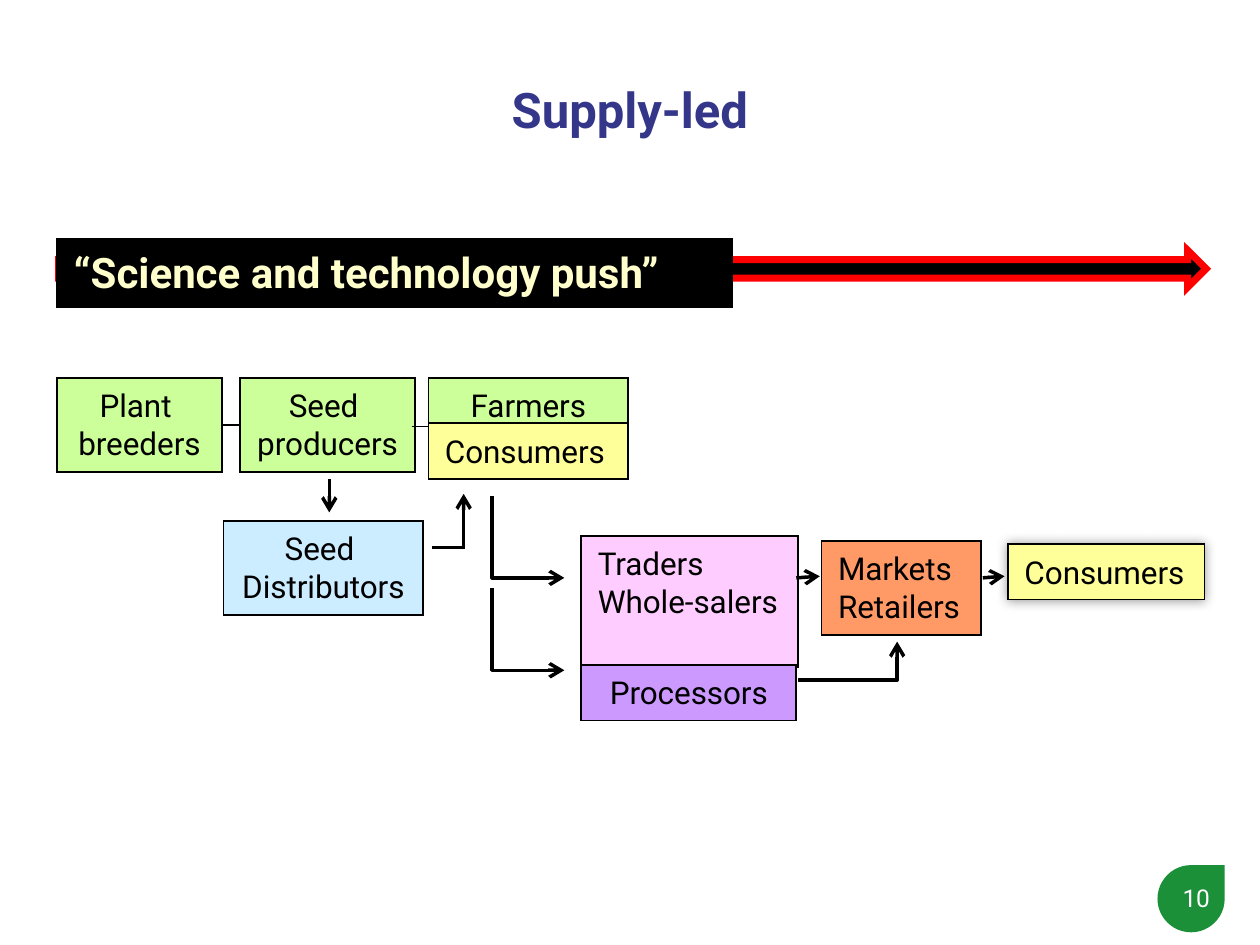
from lxml.etree import SubElement
from pptx import Presentation
from pptx.dml.color import RGBColor
from pptx.enum.shapes import MSO_CONNECTOR as LINK, MSO_SHAPE as SHAPE
from pptx.enum.text import MSO_ANCHOR as ANCHOR, PP_ALIGN as ALIGN
from pptx.oxml.ns import qn
from pptx.util import Inches, Pt

COLORS = {
    "black": "000000", "white": "FFFFFF", "navy": "343689", "badge": "1B9039",
    "red": "FF0000", "cream": "FFFFCC", "green": "CCFF99", "blue": "CCECFF",
    "yellow": "FFFF99", "pink": "FFCCFF", "purple": "CC99FF", "orange": "FF9966",
}
RGB = {name: RGBColor.from_string(code) for name, code in COLORS.items()}

deck = Presentation()
deck.slide_width = Inches(7.5)
deck.slide_height = deck.slide_width * 3 // 4
slide = deck.slides.add_slide(deck.slide_layouts[6])
COL, ROW = deck.slide_width / 75, deck.slide_height / 56.25


def block(text, left, top, width, height, fill=None, line=None, weight=0.75,
          size=13.5, color="black", bold=False, align=ALIGN.LEFT,
          anchor=ANCHOR.TOP, spacing=None, wrap=True, shape=SHAPE.RECTANGLE):
    area = [round(n) for n in (left * COL, top * ROW, width * COL, height * ROW)]
    if fill:
        item = slide.shapes.add_shape(shape, *area)
        item.shadow.inherit = False
        item.fill.solid()
        item.fill.fore_color.rgb = RGB[fill]
        if line:
            item.line.color.rgb = RGB[line]
            item.line.width = Pt(weight)
            SubElement(item.line._get_or_add_ln(), qn("a:miter"), lim="800000")
        else:
            item.line.fill.background()
    else:
        item = slide.shapes.add_textbox(*area)
    if text:
        frame = item.text_frame
        frame.text = text
        frame.word_wrap = wrap
        frame.vertical_anchor = anchor
        for paragraph in frame.paragraphs:
            paragraph.alignment = align
            paragraph.line_spacing = spacing
            for run in paragraph.runs:
                run.font.name = "Roboto"
                run.font.size = Pt(size)
                run.font.bold = bold
                run.font.color.rgb = RGB[color]
            paragraph.font.size = Pt(size)
    return item


def link(x1, y1, x2, y2, weight=1.5, arrow="tailEnd", bent=False):
    kind = LINK.ELBOW if bent else LINK.STRAIGHT
    ends = [round(n) for n in (x1 * COL, y1 * ROW, x2 * COL, y2 * ROW)]
    wire = slide.shapes.add_connector(kind, *ends)
    wire.line.color.rgb = RGB["black"]
    wire.line.width = Pt(weight)
    props = wire._element.spPr
    if bent:
        props.find(qn("a:prstGeom")).set("prst", "bentConnector2")
    if arrow:
        SubElement(wire.line._get_or_add_ln(), qn("a:" + arrow), type="arrow")
    SubElement(props, qn("a:effectLst"))


block("", 68.9, 51.5, 4, 4, fill="badge", shape=SHAPE.TEAR)
block("10", 66.9, 52.1, 6.1, 2.8, size=10.5, color="white", align=ALIGN.RIGHT)
block("Supply-led", 2, 3, 71, 7.4, size=21, color="navy", bold=True,
      align=ALIGN.CENTER, anchor=ANCHOR.MIDDLE, spacing=0.9)

block("", 3.5, 14.9, 68.3, 2.2, fill="black", line="red", weight=3,
      shape=SHAPE.RIGHT_ARROW)
block("“Science and technology push”", 3.4, 14.2, 40.2, 4.1, fill="black",
      line="black", size=18, color="cream", bold=True, wrap=False)

SINGLE, DOUBLE = 3.3, 5.6
actors = [
    ("Plant \nbreeders", 3.4, 22.5, 9.8, DOUBLE, "green", ALIGN.CENTER, True),
    ("Seed \vproducers", 14.3, 22.5, 10.4, DOUBLE, "green", ALIGN.CENTER, False),
    ("Farmers", 25.5, 22.5, 11.9, SINGLE, "green", ALIGN.CENTER, True),
    ("Consumers", 25.5, 25.2, 11.9, SINGLE, "yellow", ALIGN.LEFT, True),
    ("Seed \vDistributors", 13.3, 31, 11.9, DOUBLE, "blue", ALIGN.CENTER, True),
    ("Traders\nWhole-salers", 34.6, 31.9, 12.9, 7.8, "pink", ALIGN.LEFT, True),
    ("Processors", 34.6, 39.6, 12.8, SINGLE, "purple", ALIGN.CENTER, True),
    ("Markets\nRetailers", 48.9, 32.2, 9.5, DOUBLE, "orange", ALIGN.LEFT, False),
    ("Consumers", 60, 32.4, 11.7, SINGLE, "yellow", ALIGN.LEFT, True),
]
for text, left, top, width, height, fill, align, wrap in actors:
    end_buyers = block(text, left, top, width, height, fill=fill, line="black",
                       align=align, wrap=wrap)

effects = end_buyers._element.spPr.find(qn("a:effectLst"))
glow = SubElement(effects, qn("a:outerShdw"), blurRad=str(Pt(5)), dist="0")
tint = SubElement(glow, qn("a:srgbClr"), val=COLORS["black"])
SubElement(tint, qn("a:alpha"), val="40000")

for start, end, y in [(13.2, 14.3, 25.3), (24.5, 25.5, 25.4)]:
    link(start, y, end, y, weight=0.5, arrow=None)

link(19.6, 28.5, 19.6, 30.5)
link(25.7, 32.6, 27.6, 32.6, arrow=None)
link(27.6, 32.7, 27.6, 29.4)
for start, end in [(47.4, 48.8), (58.5, 59.8)]:
    link(start, 34.4, end, 34.3)

for top in (29.5, 35):
    link(33.6, top + 4.9, 29.3, top, arrow="headEnd", bent=True)
link(47.5, 40.5, 53.4, 38.2, bent=True)

deck.save("out.pptx")
